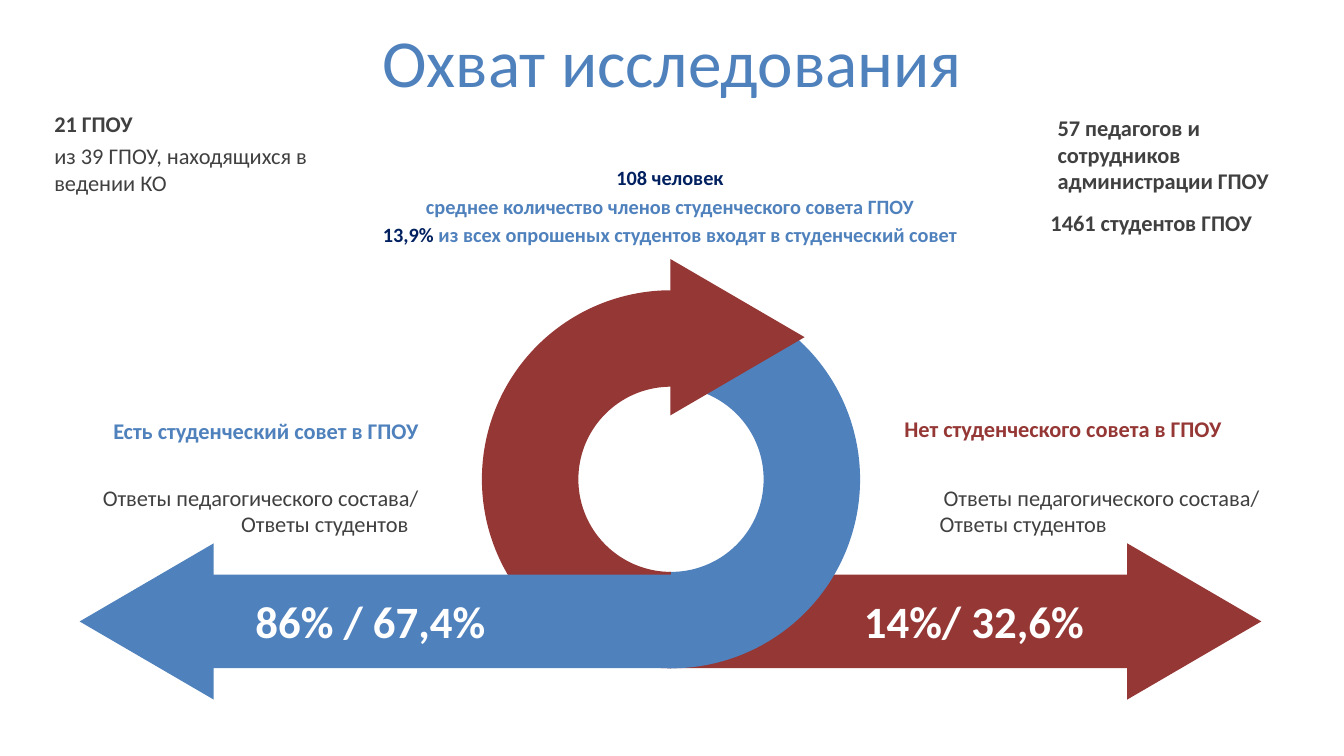
"""Build the slide on the coverage of the student council survey."""
from pptx import Presentation
from pptx.dml.color import RGBColor
from pptx.enum import shapes, text
from pptx.util import Inches, Pt

BLUE = RGBColor(0x4F, 0x81, 0xBD)
RED = RGBColor(0x95, 0x37, 0x35)
NAVY = RGBColor(0x00, 0x20, 0x60)
GREY = RGBColor(0x40, 0x40, 0x40)
WHITE = RGBColor(0xFF, 0xFF, 0xFF)

LEFT, CENTER, RIGHT = text.PP_ALIGN.LEFT, text.PP_ALIGN.CENTER, text.PP_ALIGN.RIGHT
TOP, MIDDLE = text.MSO_ANCHOR.TOP, text.MSO_ANCHOR.MIDDLE
SHAPE = shapes.MSO_SHAPE

TITLE = "Охват исследования"
STAFF = "Ответы педагогического состава/"
STUDENTS = "Ответы студентов"
COUNCIL = [
    [("108 человек", NAVY)],
    [("среднее количество членов студенческого совета ГПОУ", BLUE)],
    [("13,9% ", NAVY), ("из всех опрошеных студентов входят в студенческий совет", BLUE)],
]
LABELS = [
    ((0.44, 1.36, 2.85, 0.64), "из 39 ГПОУ, находящихся в ведении КО", GREY, 16, False, LEFT, TOP),
    ((0.44, 1.04, 2.85, 0.37), "21 ГПОУ", GREY, 16, True, LEFT, TOP),
    ((10.39, 1.08, 2.85, 0.91), "57 педагогов и сотрудников администрации ГПОУ", GREY, 16, True, LEFT, TOP),
    ((10.32, 2.03, 2.85, 0.37), "1461 студентов ГПОУ", GREY, 16, True, LEFT, TOP),
    ((2.16, 5.84, 3.03, 0.64), "86% / 67,4%", WHITE, 32, True, CENTER, MIDDLE),
    ((8.14, 5.84, 3.04, 0.64), "14%/ 32,6%", WHITE, 32, True, CENTER, MIDDLE),
    ((0.53, 4.09, 3.72, 0.37), "Есть студенческий совет в ГПОУ", BLUE, 16, True, RIGHT, TOP),
    ((8.87, 4.07, 3.72, 0.37), "Нет студенческого совета в ГПОУ", RED, 16, True, LEFT, TOP),
]
ANSWERS = [(0.53, RIGHT, "marR", 0.1), (8.87, LEFT, "marL", 0.35)]

RING = (4.78, 2.88, 3.75, 3.75)
ARC = (53.999, 162.705, 0.255)
HEAD_W, HEAD_H = 1.55, 1.33
LOOP = [
    (SHAPE.RECTANGLE, (6.68, 5.7, 4.93, 0.93), 0, RED),
    (SHAPE.BLOCK_ARC, RING, 180, BLUE),
    (SHAPE.BLOCK_ARC, RING, 0, RED),
    (SHAPE.ISOSCELES_TRIANGLE, (6.54, 2.68, HEAD_W, HEAD_H), 90, RED),
    (SHAPE.RECTANGLE, (1.74, 5.7, 4.93, 0.93), 0, BLUE),
    (SHAPE.ISOSCELES_TRIANGLE, (11.07, 5.5, HEAD_W, HEAD_H), 90, RED),
    (SHAPE.ISOSCELES_TRIANGLE, (0.68, 5.5, HEAD_W, HEAD_H), 270, BLUE),
]


def inches(box):
    return [Inches(v) for v in box]


def set_up(tf, anchor):
    tf.word_wrap = True
    tf.auto_size = text.MSO_AUTO_SIZE.NONE
    tf.vertical_anchor = anchor


def add_run(p, words, color, size, bold=False):
    r = p.add_run()
    r.text = words
    r.font.name, r.font.size, r.font.bold = "Calibri", Pt(size), bold
    r.font.color.rgb = color


def add_text(s, box, paragraphs, size, bold, align, anchor):
    tf = s.shapes.add_textbox(*inches(box)).text_frame
    set_up(tf, anchor)
    for i, runs in enumerate(paragraphs):
        p = tf.add_paragraph() if i else tf.paragraphs[0]
        p.alignment = align
        for words, color in runs:
            add_run(p, words, color, size, bold)
    return tf


def add_loop_part(s, kind, box, rotation, color):
    sp = s.shapes.add_shape(kind, *inches(box))
    sp.rotation = rotation
    sp.shadow.inherit = False
    sp.fill.solid()
    sp.fill.fore_color.rgb = color
    sp.line.fill.background()
    if kind == SHAPE.BLOCK_ARC:
        for i, value in enumerate(ARC):
            sp.adjustments[i] = value


def main():
    prs = Presentation()
    prs.slide_width, prs.slide_height = Inches(13.33), Inches(7.5)
    s = prs.slides.add_slide(prs.slide_layouts[5])

    title = s.shapes.title
    title.left, title.top, title.width, title.height = inches((0, 0.18, 13.33, 0.84))
    set_up(title.text_frame, MIDDLE)
    p = title.text_frame.paragraphs[0]
    p.alignment = CENTER
    add_run(p, TITLE, BLUE, 48)

    for part in LOOP:
        add_loop_part(s, *part)

    tf = add_text(s, (-0.02, 1.65, 13.33, 0.79), COUNCIL, 14.5, True, CENTER, MIDDLE)
    for p in tf.paragraphs[1:]:
        p.space_before = Pt(2.9)

    for box, words, color, size, bold, align, anchor in LABELS:
        add_text(s, box, [[(words, color)]], size, bold, align, anchor)

    for left, align, margin, indent in ANSWERS:
        lines = [[(STAFF, GREY)], [(STUDENTS, GREY)]]
        tf = add_text(s, (left, 4.75, 3.72, 0.64), lines, 16, False, align, TOP)
        tf.paragraphs[0].alignment = RIGHT
        tf.paragraphs[1]._p.get_or_add_pPr().set(margin, str(Inches(indent)))

    prs.save("out.pptx")


if __name__ == "__main__":
    main()
